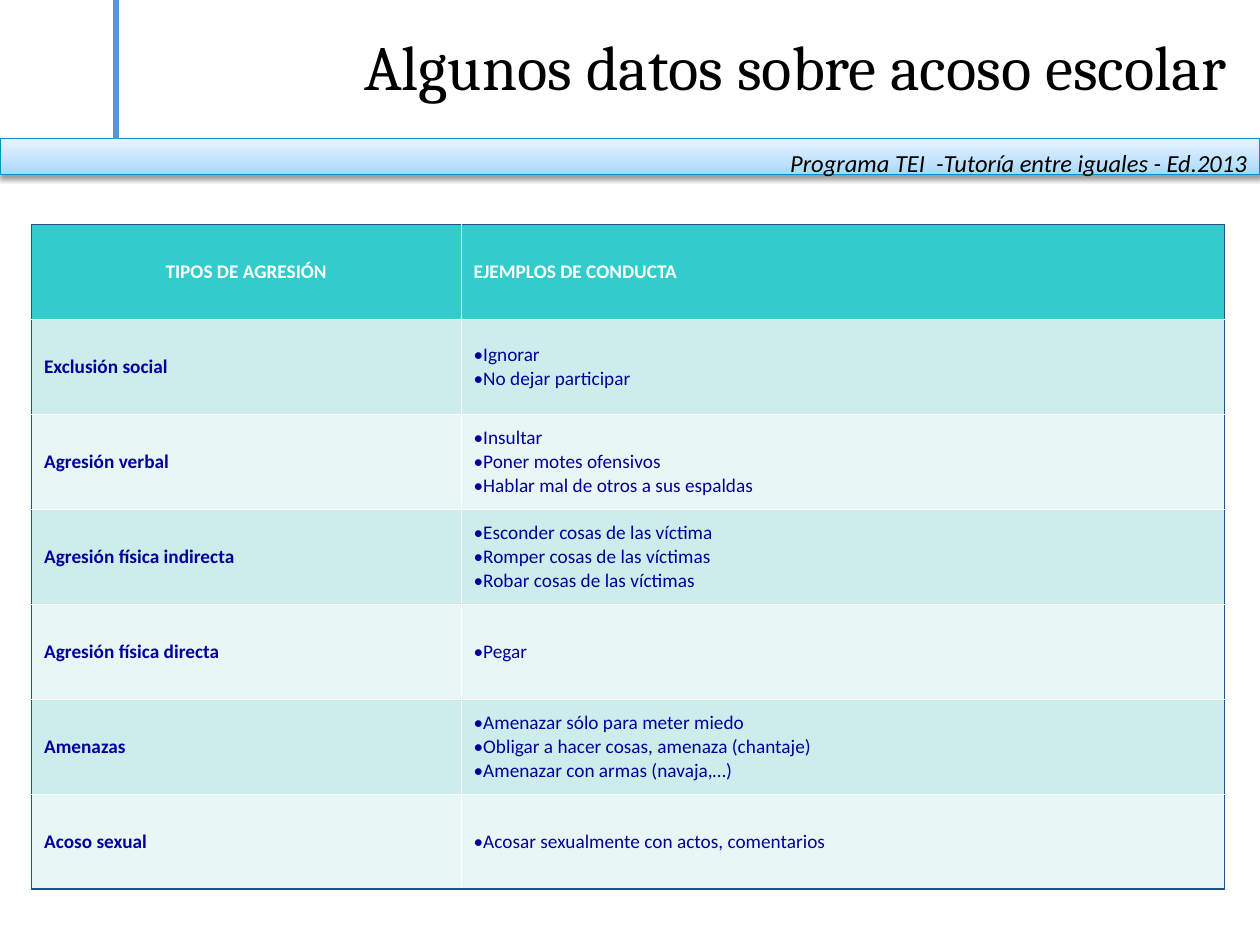
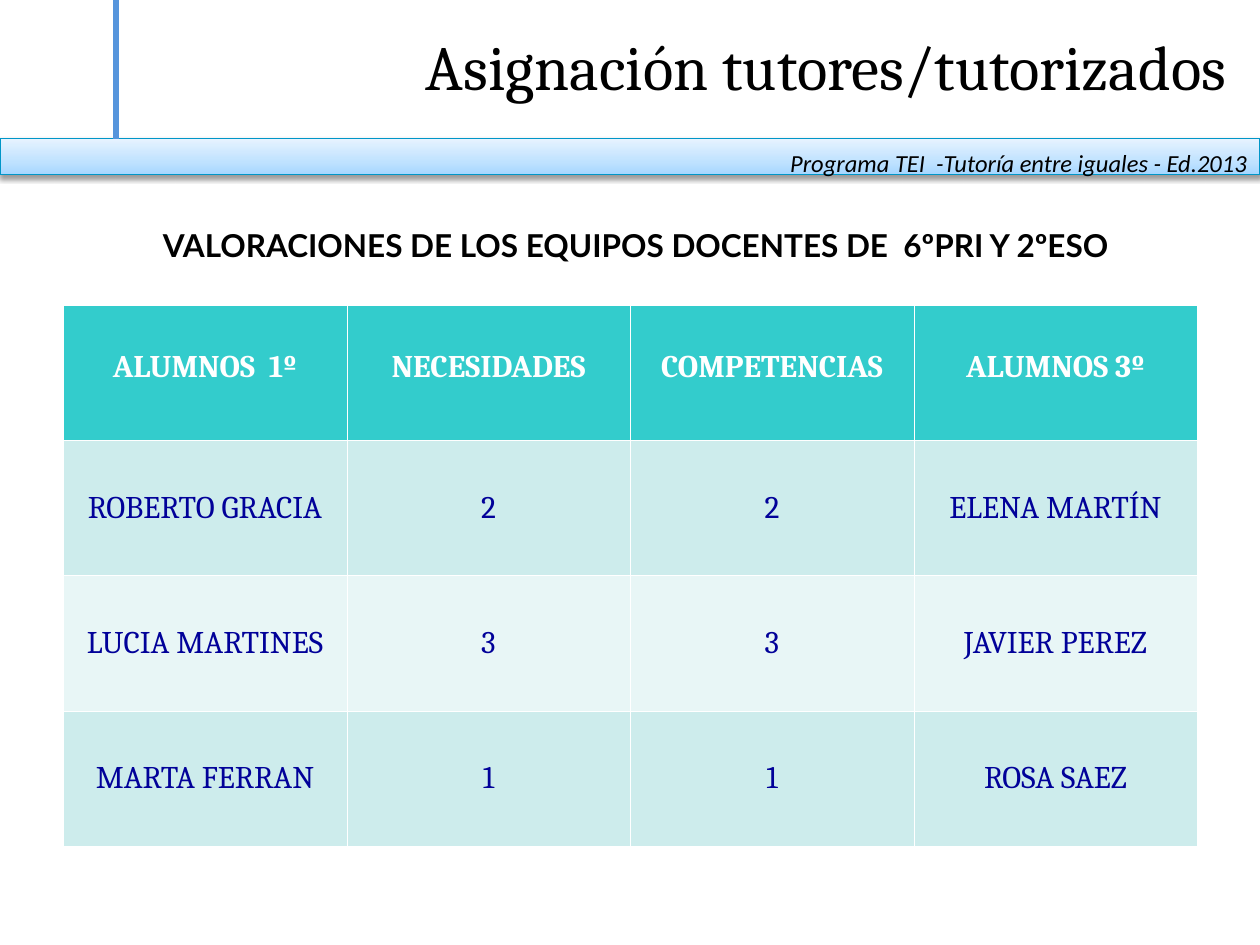
from collections import namedtuple

from lxml import etree
from pptx import Presentation
from pptx import util as u
from pptx.dml.color import RGBColor
from pptx.enum import shapes, text
from pptx.oxml.ns import qn

COLORS = {
    "black": "000000", "white": "FFFFFF", "navy": "010199", "frame": "1D528D",
    "header": "33CCCC", "odd_row": "CDECEC", "even_row": "E8F6F6",
    "rule": "5695DC", "band_line": "0096C8",
    "band_low": "A5D6FF", "band_mid": "BFE2FF", "band_high": "E7F3FF",
}
BAND_STOPS = [(0, "band_low"), (35, "band_mid"), (100, "band_high")]
FOOTER = "Programa TEI  -Tutoría entre iguales - Ed.2013"

# The slide is a grid of 100 columns by 75 rows of square cells
CELL = u.Inches(0.1)
COLUMNS, ROWS = 100, 75
BAND_HEIGHT = 2.87
Box = namedtuple("Box", "left top width height")
HEADER_BOX = Box(0, 0, COLUMNS, 11 + BAND_HEIGHT)

LEFT, CENTER, RIGHT = (text.PP_ALIGN.LEFT, text.PP_ALIGN.CENTER,
                       text.PP_ALIGN.RIGHT)

AGGRESSIONS = [
    ("Exclusión social", ["Ignorar", "No dejar participar"]),
    ("Agresión verbal", ["Insultar", "Poner motes ofensivos",
                         "Hablar mal de otros a sus espaldas"]),
    ("Agresión física indirecta", ["Esconder cosas de las víctima",
                                   "Romper cosas de las víctimas",
                                   "Robar cosas de las víctimas"]),
    ("Agresión física directa", ["Pegar"]),
    ("Amenazas", ["Amenazar sólo para meter miedo",
                  "Obligar a hacer cosas, amenaza (chantaje)",
                  "Amenazar con armas (navaja,…)"]),
    ("Acoso sexual", ["Acosar sexualmente con actos, comentarios"]),
]
PAIRINGS = [
    ["ALUMNOS  1º", "NECESIDADES", "COMPETENCIAS", "ALUMNOS 3º"],
    ["ROBERTO GRACIA", "2", "2", "ELENA MARTÍN"],
    ["LUCIA MARTINES", "3", "3", "JAVIER PEREZ"],
    ["MARTA FERRAN", "1", "1", "ROSA SAEZ"],
]


def rgb(name):
    return RGBColor.from_string(COLORS[name])


def grid(*cells):
    return [round(cell * CELL) for cell in cells]


def add_xml(parent, tag, **attributes):
    element = etree.SubElement(parent, qn(tag))
    for name, value in attributes.items():
        element.set(name, str(value))
    return element


def add_color(parent, name):
    return add_xml(parent, "a:srgbClr", val=COLORS[name])


def write(frame, lines, font, size, color, align=LEFT, bold=False,
          italic=False, bullet=None, spacing=None):
    frame.word_wrap = True
    for index, line in enumerate(lines):
        paragraph = frame.paragraphs[0] if index == 0 else frame.add_paragraph()
        paragraph.alignment = align
        if spacing:
            paragraph.line_spacing = spacing
        if bullet:
            properties = paragraph._p.get_or_add_pPr()
            properties.set("marL", "0")
            properties.set("indent", "0")
            add_color(add_xml(properties, "a:buClr"), color)
            add_xml(properties, "a:buFont", typeface=font)
            add_xml(properties, "a:buChar", char=bullet)
        run = paragraph.add_run()
        run.text = line
        run.font.name, run.font.size = font, u.Pt(size)
        run.font.bold, run.font.italic = bold, italic
        run.font.color.rgb = rgb(color)


def add_text(slide, box, line, **style):
    shape = slide.shapes.add_textbox(*grid(*box))
    write(shape.text_frame, [line], **style)


def add_band(slide, box):
    band = slide.shapes.add_shape(shapes.MSO_SHAPE.RECTANGLE, *grid(*box))
    band.line.color.rgb, band.line.width = rgb("band_line"), u.Pt(0.75)
    # Three-colour gradient from the bottom up
    band.fill.gradient()
    band.fill.gradient_angle = 90
    stops = band._element.spPr.find(".//" + qn("a:gsLst"))
    for stop in list(stops):
        stops.remove(stop)
    for position, color in BAND_STOPS:
        add_color(add_xml(stops, "a:gs", pos=position * 1000), color)
    # Soft shadow below
    band.shadow.inherit = False
    effects = band._element.spPr.find(qn("a:effectLst"))
    shadow = add_xml(effects, "a:outerShdw", blurRad=u.Pt(3.1),
                     dist=u.Pt(1.6), dir=90 * 60000, rotWithShape=0)
    add_xml(add_color(shadow, "black"), "a:alpha", val=38000)


def add_header(slide, box, title):
    band_top = box.top + box.height - BAND_HEIGHT
    add_band(slide, Box(box.left, band_top, box.width, BAND_HEIGHT))

    # Vertical rule standing on the band
    rule_x = box.left + 9.2
    rule = slide.shapes.add_connector(
        shapes.MSO_CONNECTOR.STRAIGHT,
        *grid(rule_x, box.top, rule_x, band_top))
    rule.line.color.rgb, rule.line.width = rgb("rule"), u.Pt(3)
    add_xml(rule._element.spPr, "a:effectLst")

    add_text(slide, Box(box.left + box.width - 39, band_top + 0.25, 39, 5.7),
             FOOTER, font="Calibri", size=14, color="black", align=RIGHT,
             italic=True)

    # Title
    shape = slide.shapes.title
    shape.left, shape.top, shape.width, shape.height = grid(
        box.left + 2.5, box.top + 1.7, box.width - 4.15, 7)
    shape.text_frame.auto_size = text.MSO_AUTO_SIZE.NONE
    shape.text_frame.vertical_anchor = text.MSO_ANCHOR.MIDDLE
    write(shape.text_frame, [title], "Cambria", 36, "black", RIGHT)


def set_borders(cell, borders):
    """Draw (colour, points) borders in the order left, right, top, bottom."""
    properties = cell._tc.get_or_add_tcPr()
    for side, (color, points) in zip("LRTB", borders):
        line = add_xml(properties, f"a:ln{side}", w=u.Pt(points))
        add_color(add_xml(line, "a:solidFill"), color)


def add_grid_table(slide, box, row_count, widths, outer):
    """Add a table with a header, striped rows and the given outer border."""
    column_count = len(widths)
    table = slide.shapes.add_table(row_count, column_count, *grid(*box)).table
    for column, width in zip(table.columns, widths):
        column.width = round(width * CELL)
    for row in table.rows:
        row.height = round(box.height / row_count * CELL)

    inner, below_header = ("white", 0.11), ("white", 0.34)
    for r in range(row_count):
        fill = "header" if r == 0 else "odd_row" if r % 2 else "even_row"
        top = outer if r == 0 else below_header if r == 1 else inner
        bottom = (outer if r == row_count - 1
                  else below_header if r == 0 else inner)
        for c in range(column_count):
            cell = table.cell(r, c)
            set_borders(cell, [outer if c == 0 else inner,
                               outer if c == column_count - 1 else inner,
                               top, bottom])
            cell.fill.solid()
            cell.fill.fore_color.rgb = rgb(fill)
            cell.vertical_anchor = text.MSO_ANCHOR.MIDDLE
    return table


def add_aggression_table(slide, box):
    label_width = box.width * 0.36
    table = add_grid_table(slide, box, len(AGGRESSIONS) + 1,
                           [label_width, box.width - label_width],
                           outer=("frame", 1))
    style = dict(font="Calibri", size=11)
    headings = [("TIPOS DE AGRESIÓN", CENTER), ("EJEMPLOS DE CONDUCTA", LEFT)]
    for c, (heading, align) in enumerate(headings):
        write(table.cell(0, c).text_frame, [heading], color="white",
              align=align, bold=True, **style)
    for r, (kind, examples) in enumerate(AGGRESSIONS, 1):
        write(table.cell(r, 0).text_frame, [kind], color="navy", bold=True,
              **style)
        write(table.cell(r, 1).text_frame, examples, color="navy",
              bullet="•", **style)


def add_pairing_table(slide, box):
    column_count = len(PAIRINGS[0])
    table = add_grid_table(slide, box, len(PAIRINGS),
                           [box.width / column_count] * column_count,
                           outer=("white", 0.11))
    for r, values in enumerate(PAIRINGS):
        is_header = r == 0
        for c, value in enumerate(values):
            cell = table.cell(r, c)
            if is_header:
                cell.margin_bottom = u.Inches(0.14)
            write(cell.text_frame, [value], "Cambria", 18,
                  "white" if is_header else "navy", CENTER, bold=is_header,
                  spacing=1.02)


def add_titled_slide(presentation, title):
    slide = presentation.slides.add_slide(presentation.slide_layouts[5])
    add_header(slide, HEADER_BOX, title)
    return slide


def main():
    presentation = Presentation()
    presentation.slide_width, presentation.slide_height = grid(COLUMNS, ROWS)

    # Types of aggression
    slide = add_titled_slide(presentation, "Algunos datos sobre acoso escolar")
    add_aggression_table(slide, Box(2.5, 17.8, 94.7, 52.8))

    # Pairing of tutors and pupils
    slide = add_titled_slide(presentation, "Asignación tutores/tutorizados")
    add_pairing_table(slide, Box(5.02, 24.2, 90, 42.95))
    add_text(slide, Box(5.4, 17.45, 90.1, 4),
             "VALORACIONES DE LOS EQUIPOS DOCENTES DE  6ºPRI Y 2ºESO",
             font="Lato", size=18, color="black", align=CENTER, bold=True)

    presentation.save("out.pptx")


if __name__ == "__main__":
    main()
